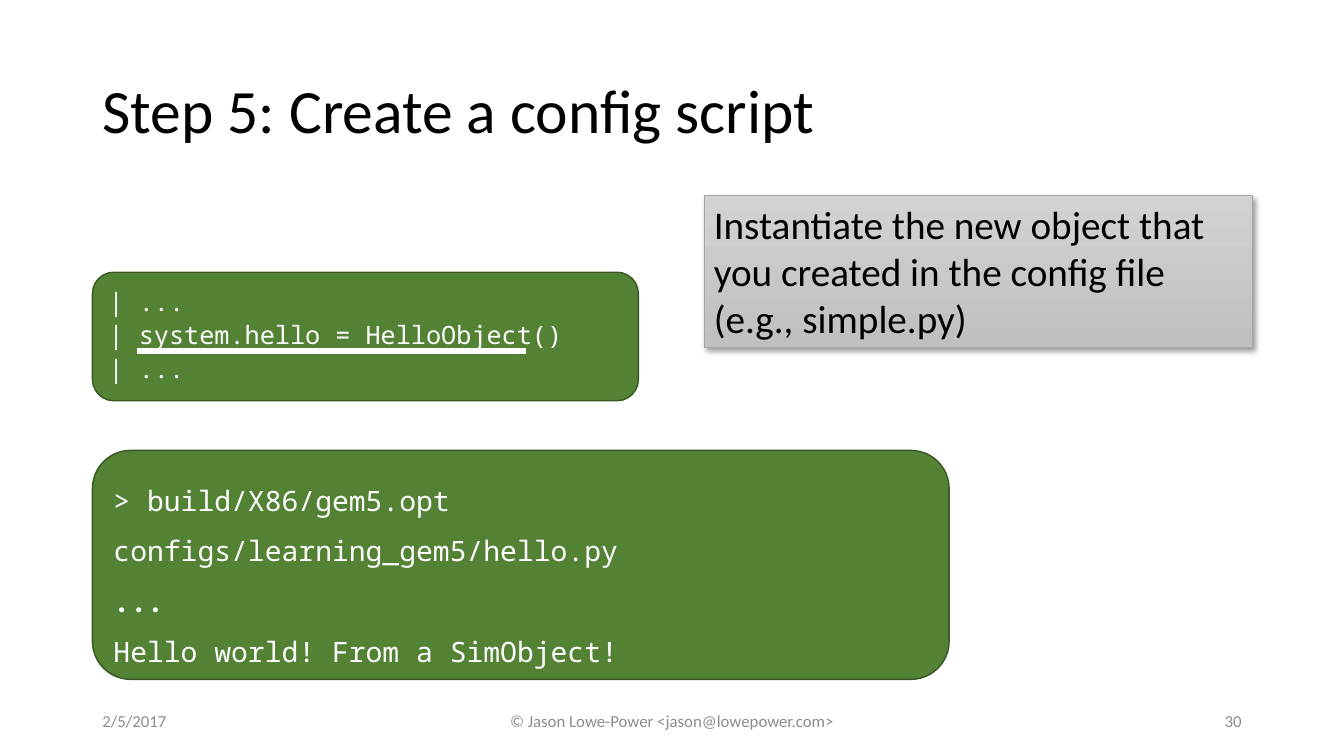
from lxml import etree
from pptx import Presentation
from pptx.dml.color import RGBColor
from pptx.enum.shapes import MSO_CONNECTOR as Connector, MSO_SHAPE as Shape
from pptx.enum.text import MSO_ANCHOR as Anchor, PP_ALIGN as Align
from pptx.oxml import parse_xml
from pptx.oxml.ns import nsdecls, qn
from pptx.util import Cm, Pt

COLORS = {
    "text": "000000", "footer": "8C8C8C", "code": "FFFFFF",
    "panel": "548235", "panel_line": "385723",
    "note_top": "D2D2D2", "note_bottom": "C0C0C0", "note_line": "A5A5A5",
}
BODY_FONT, CODE_FONT = "Calibri", "Noto Sans Mono"
MARGIN = 2.33


def color(name):
    return RGBColor.from_string(COLORS[name])


def write(frame, lines, size, ink, font=BODY_FONT, align=Align.LEFT,
          anchor=Anchor.MIDDLE, spacing=1.0):
    frame.word_wrap = True
    frame.vertical_anchor = anchor
    for index, line in enumerate(lines):
        para = frame.paragraphs[0] if index == 0 else frame.add_paragraph()
        para.text = line
        para.alignment = align
        para.line_spacing = spacing
        para.font.size = Pt(size)
        para.font.name = font
        para.font.color.rgb = color(ink)


def add_title(page, box, text):
    title = page.shapes.title
    title.left, title.top, title.width, title.height = map(Cm, box)
    write(title.text_frame, [text], 44, "text", spacing=0.9)


def add_code_panel(page, box, lines, size, spacing):
    panel = page.shapes.add_shape(Shape.ROUNDED_RECTANGLE, *map(Cm, box))
    panel.shadow.inherit = False
    panel.fill.solid()
    panel.fill.fore_color.rgb = color("panel")
    panel.line.color.rgb = color("panel_line")
    panel.line.width = Pt(1)
    write(panel.text_frame, lines, size, "code", CODE_FONT,
          anchor=Anchor.TOP, spacing=spacing)
    return panel


def add_config_code(page, box):
    lines = ["| ...", "| system.hello = HelloObject()", "| ..."]
    panel = add_code_panel(page, box, lines, 18, 1.1)
    panel.text_frame.margin_right = Cm(0.13)

    # Underline below the new statement
    left, top = box[0] + 1.12, box[1] + 1.98
    underline = page.shapes.add_connector(
        Connector.STRAIGHT, Cm(left), Cm(top), Cm(left + 9.8), Cm(top))
    underline.line.color.rgb = color("code")
    underline.line.width = Pt(4.5)
    etree.SubElement(underline._element.spPr, qn("a:effectLst"))


def add_note(page, box, text):
    note = page.shapes.add_shape(Shape.RECTANGLE, *map(Cm, box))
    note.fill.gradient()
    note.fill.gradient_angle = 270
    for stop, name in zip(note.fill.gradient_stops, ("note_top", "note_bottom")):
        stop.color.rgb = color(name)
    note.line.color.rgb = color("note_line")
    note.line.width = Pt(0.5)

    # Soft shadow towards the lower right
    note.shadow.inherit = False
    effects = note._element.spPr.find(qn("a:effectLst"))
    effects.append(parse_xml(
        f'<a:outerShdw {nsdecls("a")} blurRad="{Pt(4)}" dist="{Pt(3)}" '
        'dir="2700000" algn="tl" rotWithShape="0"><a:srgbClr val="000000">'
        '<a:alpha val="40000"/></a:srgbClr></a:outerShdw>'))
    write(note.text_frame, [text], 28, "text")


def add_console(page, box):
    lines = ["> build/X86/gem5.opt configs/learning_gem5/hello.py", "...",
             "Hello world! From a SimObject!"]
    panel = add_code_panel(page, box, lines, 20, 1.5)
    panel.text_frame.paragraphs[1].font.bold = True


def add_footer(page, box):
    left, top, width, height = box
    side, middle = 7.62, 11.43
    parts = [
        ("2/5/2017", left, side, Align.LEFT),
        ("© Jason Lowe-Power <jason@lowepower.com>",
         left + (width - middle) / 2, middle, Align.CENTER),
        ("30", left + width - side, side, Align.RIGHT),
    ]
    for text, start, extent, align in parts:
        label = page.shapes.add_textbox(
            Cm(start), Cm(top), Cm(extent), Cm(height))
        write(label.text_frame, [text], 12, "footer", align=align)


def main():
    deck = Presentation()
    deck.slide_width, deck.slide_height = Cm(33.87), Cm(19.05)
    page = deck.slides.add_slide(deck.slide_layouts[5])

    add_title(page, (MARGIN, 1.02, 27.43, 3.68), "Step 5: Create a config script")
    add_footer(page, (MARGIN, 17.66, 29.21, 1.02))
    add_config_code(page, (MARGIN, 6.86, 13.76, 3.24))
    add_note(page, (17.74, 4.92, 13.81, 3.83),
             "Instantiate the new object that you created in the config file "
             "(e.g., simple.py)")
    add_console(page, (MARGIN, 11.35, 21.59, 5.77))
    deck.save("out.pptx")


if __name__ == "__main__":
    main()
